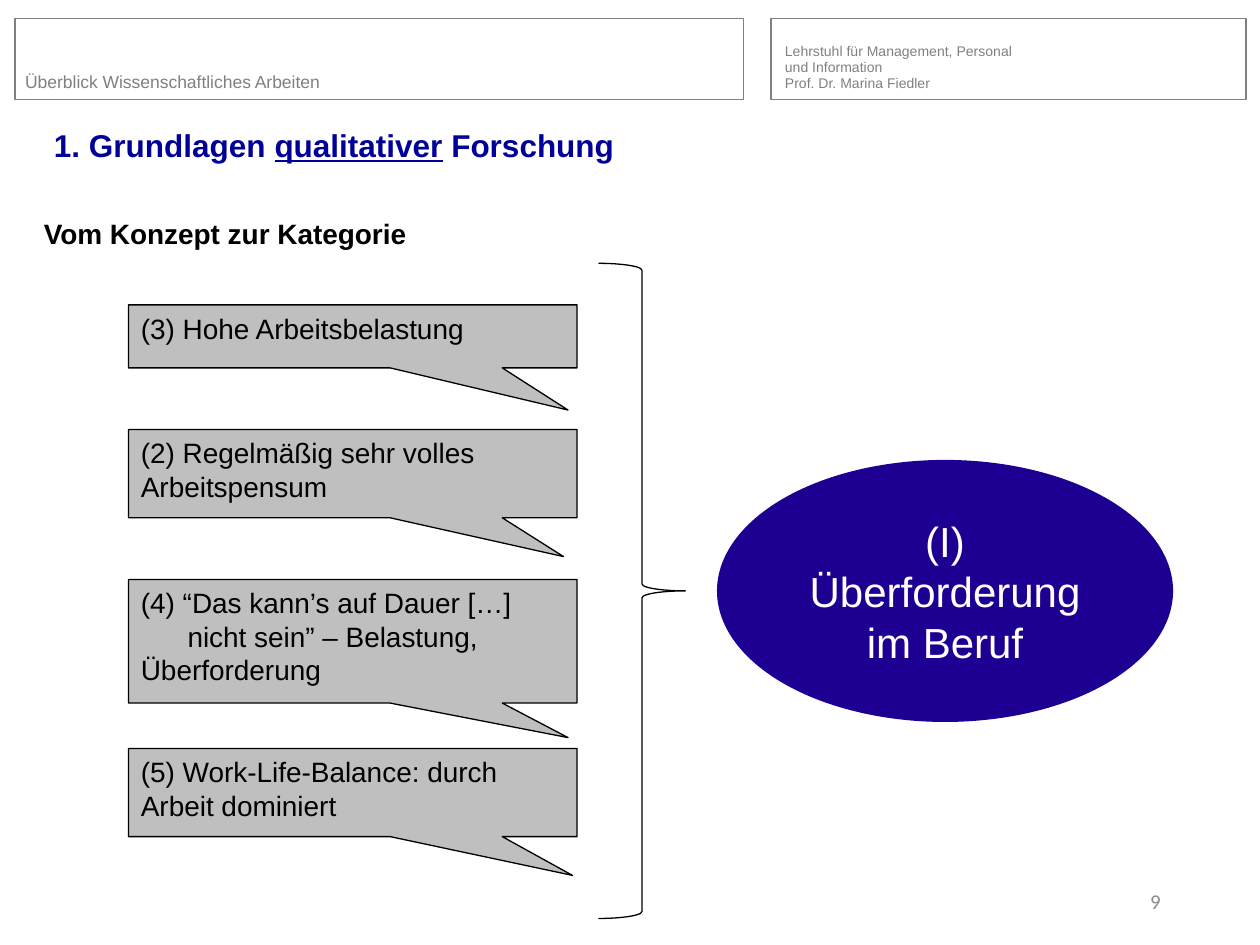
from pptx import Presentation
from pptx.dml.color import RGBColor
from pptx.enum.shapes import MSO_SHAPE
from pptx.enum.text import MSO_ANCHOR, PP_ALIGN
from pptx.util import Inches, Pt

BLACK = RGBColor(0x00, 0x00, 0x00)
WHITE = RGBColor(0xFF, 0xFF, 0xFF)
GRAY = RGBColor(0x80, 0x80, 0x80)
NUMBER_GRAY = RGBColor(0x8C, 0x8C, 0x8C)
CALLOUT_GRAY = RGBColor(0xBF, 0xBF, 0xBF)
TITLE_BLUE = RGBColor(0x00, 0x00, 0x99)
ELLIPSE_BLUE = RGBColor(0x1D, 0x00, 0x92)


class SlideBuilder:
    font_name = "Arial"
    line_width = Pt(0.75)
    callout_left = 1.02
    callout_width = 3.56
    callout_indent = Inches(0.37)

    def __init__(self, slide):
        self.slide = slide

    def fill_text(self, frame, paragraphs, size, color, bold=False, font_name=None,
                  align=PP_ALIGN.LEFT, anchor=MSO_ANCHOR.TOP, spacing=None):
        frame.word_wrap = True
        frame.vertical_anchor = anchor
        for index, content in enumerate(paragraphs):
            paragraph = frame.add_paragraph() if index else frame.paragraphs[0]
            if isinstance(content, str):
                paragraph.text = content
            else:
                for text, underlined in content:
                    run = paragraph.add_run()
                    run.text = text
                    run.font.underline = underlined
            paragraph.alignment = align
            paragraph.line_spacing = spacing
            paragraph.font.name = font_name or self.font_name
            paragraph.font.size = Pt(size)
            paragraph.font.bold = bold
            paragraph.font.color.rgb = color

    def text(self, box, paragraphs, size, color, inset=True, **style):
        frame = self.slide.shapes.add_textbox(*map(Inches, box)).text_frame
        if not inset:
            frame.margin_left = frame.margin_right = 0
            frame.margin_top = frame.margin_bottom = 0
        self.fill_text(frame, paragraphs, size, color, **style)

    def shape(self, kind, box, fill=None, line=None, adjustments=()):
        shape = self.slide.shapes.add_shape(kind, *map(Inches, box))
        shape.shadow.inherit = False
        for index, value in enumerate(adjustments):
            shape.adjustments[index] = value
        if fill is None:
            shape.fill.background()
        else:
            shape.fill.solid()
            shape.fill.fore_color.rgb = fill
        if line is None:
            shape.line.fill.background()
        else:
            shape.line.color.rgb = line
            shape.line.width = self.line_width
        return shape

    def callout(self, top, height, tip, paragraphs):
        box = (self.callout_left, top, self.callout_width, height)
        shape = self.shape(MSO_SHAPE.RECTANGULAR_CALLOUT, box, CALLOUT_GRAY, BLACK, tip)
        self.fill_text(shape.text_frame, paragraphs, 16, BLACK)
        for paragraph in shape.text_frame.paragraphs[1:]:
            properties = paragraph._p.get_or_add_pPr()
            properties.set("marL", "0")
            properties.set("indent", str(self.callout_indent))

    def ellipse(self, box, text):
        shape = self.shape(MSO_SHAPE.OVAL, box, ELLIPSE_BLUE)
        self.fill_text(shape.text_frame, [text], 24, WHITE,
                       align=PP_ALIGN.CENTER, anchor=MSO_ANCHOR.MIDDLE)


def main():
    presentation = Presentation()
    presentation.slide_width = Inches(10)
    presentation.slide_height = Inches(7.5)
    builder = SlideBuilder(presentation.slides.add_slide(presentation.slide_layouts[6]))

    for left, width in ((0.12, 5.78), (6.12, 3.77)):
        builder.shape(MSO_SHAPE.RECTANGLE, (left, 0.15, width, 0.64), line=GRAY)
    builder.text((0.2, 0.3, 3.34, 0.43), ["Überblick Wissenschaftliches Arbeiten"],
                 10, GRAY, inset=False, anchor=MSO_ANCHOR.BOTTOM)
    builder.text((6.23, 0.24, 2.93, 0.49),
                 ["Lehrstuhl für Management, Personal\nund Information",
                  "Prof. Dr. Marina Fiedler"],
                 8, GRAY, inset=False, anchor=MSO_ANCHOR.BOTTOM, spacing=0.95)
    builder.text((0.33, 0.92, 9.42, 0.5),
                 [[("1. Grundlagen ", False), ("qualitativer", True), (" Forschung", False)]],
                 18, TITLE_BLUE, bold=True, anchor=MSO_ANCHOR.MIDDLE, spacing=0.9)
    builder.text((0.25, 1.67, 9.5, 0.5), ["Vom Konzept zur Kategorie"], 16, BLACK, bold=True)

    callouts = (
        (2.42, 0.5, (0.48, 1.17), ["(3) Hohe Arbeitsbelastung"]),
        (3.41, 0.7, (0.47, 0.94), ["(2) Regelmäßig sehr volles Arbeitspensum"]),
        (4.6, 0.98, (0.48, 0.78), ["(4) “Das kann’s auf Dauer […]",
                                   "nicht sein” – Belastung, Überforderung"]),
        (5.94, 0.7, (0.49, 0.94), ["(5) Work-Life-Balance: durch Arbeit dominiert"]),
    )
    for callout in callouts:
        builder.callout(*callout)

    builder.shape(MSO_SHAPE.RIGHT_BRACE, (4.75, 2.09, 0.69, 5.2),
                  line=BLACK, adjustments=(0.08, 0.5))
    builder.ellipse((5.69, 3.65, 3.62, 2.08), "(I) Überforderung im Beruf")
    builder.text((7.06, 6.95, 2.25, 0.4), ["9"], 12, NUMBER_GRAY, font_name="Calibri",
                 align=PP_ALIGN.RIGHT, anchor=MSO_ANCHOR.MIDDLE)

    presentation.save("out.pptx")


if __name__ == "__main__":
    main()
